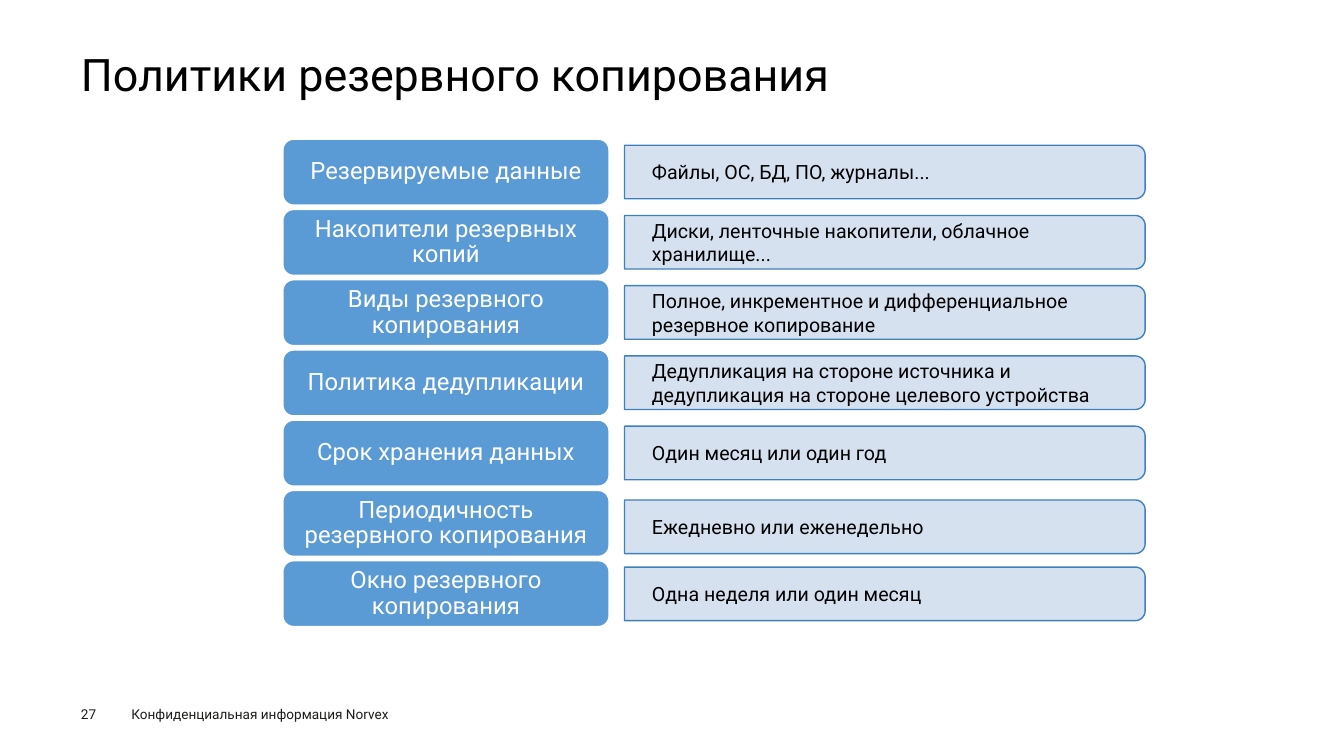
import math
from dataclasses import dataclass

from lxml import etree
from pptx import Presentation
from pptx import util as u
from pptx.dml.color import RGBColor
from pptx.enum import shapes, text
from pptx.oxml import ns


@dataclass(frozen=True)
class Theme:
    font: str = "Roboto"
    ink: str = "000000"
    footer_ink: str = "1D1D1B"
    white: str = "FFFFFF"
    label_fill: str = "5B9BD5"
    detail_fill: str = "D2DEEF"
    detail_line: str = "2E75B6"
    detail_opacity: int = 90
    title_size: float = 32
    label_size: float = 17
    detail_size: float = 14
    footer_size: float = 9.7


@dataclass(frozen=True)
class Box:
    """A region of the slide, in centimetres."""
    left: float
    top: float
    width: float
    height: float

    def lengths(self):
        return [u.Cm(n) for n in (self.left, self.top, self.width, self.height)]


THEME = Theme()

# Label, detail, and how far the detail bar sits below the top of its label
POLICIES = [
    ("Резервируемые данные", "Файлы, ОС, БД, ПО, журналы...", 0.16),
    ("Накопители резервных копий",
     "Диски, ленточные накопители, облачное хранилище...", 0.16),
    ("Виды резервного копирования",
     "Полное, инкрементное и дифференциальное резервное копирование", 0.16),
    ("Политика дедупликации",
     "Дедупликация на стороне источника и дедупликация на стороне "
     "целевого устройства", 0.16),
    ("Срок хранения данных", "Один месяц или один год", 0.16),
    ("Периодичность резервного копирования", "Ежедневно или еженедельно", 0.25),
    ("Окно резервного копирования", "Одна неделя или один месяц", 0.17),
]


def write(shape, words, size, color, insets=(0, 0, 0, 0),
          align=text.PP_ALIGN.LEFT, anchor=text.MSO_ANCHOR.MIDDLE, spacing=1.0):
    """Fill a shape with one formatted paragraph."""
    frame = shape.text_frame
    frame.text = words
    frame.word_wrap = True
    frame.vertical_anchor = anchor
    (frame.margin_left, frame.margin_top,
     frame.margin_right, frame.margin_bottom) = [u.Cm(n) for n in insets]
    para = frame.paragraphs[0]
    para.alignment = align
    para.line_spacing = spacing
    for span in para.runs:
        span.font.name = THEME.font
        span.font.size = u.Pt(size)
        span.font.color.rgb = RGBColor.from_string(color)


def paint(shape, fill, line, width, opacity=100):
    """Set fill and outline, both with the same opacity."""
    shape.shadow.inherit = False
    shape.fill.solid()
    shape.fill.fore_color.rgb = RGBColor.from_string(fill)
    shape.line.color.rgb = RGBColor.from_string(line)
    shape.line.width = u.Pt(width)
    if opacity < 100:
        for color in shape.element.spPr.iter(ns.qn("a:srgbClr")):
            etree.SubElement(color, ns.qn("a:alpha"), val=str(opacity * 1000))


def add_title(page, box):
    shape = page.shapes.add_textbox(*box.lengths())
    write(shape, "Политики резервного копирования", THEME.title_size,
          THEME.ink, spacing=0.9)


def add_label(page, box, words):
    shape = page.shapes.add_shape(
        shapes.MSO_SHAPE.ROUNDED_RECTANGLE, *box.lengths())
    paint(shape, THEME.label_fill, THEME.white, 1.5)
    write(shape, words, THEME.label_size, THEME.white,
          insets=(0.17, 0.1, 0.17, 0.1), align=text.PP_ALIGN.CENTER, spacing=0.9)


def add_detail(page, box, words):
    """A bar with square left corners and rounded right corners."""
    radius, steps = 0.25, 10
    right, bottom = box.left + box.width, box.top + box.height
    turns = [math.pi / 2 * step / steps for step in range(steps + 1)]
    upper = [(right - radius + radius * math.sin(turn),
              box.top + radius - radius * math.cos(turn)) for turn in turns]
    lower = [(x, box.top + bottom - y) for x, y in reversed(upper)]
    outline = upper + lower + [(box.left, bottom)]
    builder = page.shapes.build_freeform(u.Cm(box.left), u.Cm(box.top))
    builder.add_line_segments([(u.Cm(x), u.Cm(y)) for x, y in outline], close=True)
    shape = builder.convert_to_shape()
    paint(shape, THEME.detail_fill, THEME.detail_line, 1, THEME.detail_opacity)
    write(shape, words, THEME.detail_size, THEME.ink, insets=(0.69, 0, 0.76, 0))


def add_policies(page, box):
    label_width, label_height, gap, detail_height = 8.24, 1.68, 0.38, 1.35
    pitch = (box.height - label_height) / (len(POLICIES) - 1)
    detail_left = box.left + label_width + gap
    detail_width = box.width - label_width - gap
    for row, (label, detail, drop) in enumerate(POLICIES):
        top = box.top + row * pitch
        add_detail(page, Box(detail_left, top + drop, detail_width, detail_height),
                   detail)
        add_label(page, Box(box.left, top, label_width, label_height), label)


def add_footer(page, box):
    number_width = 1.02
    notice_left = box.left + number_width + 0.25
    notice_width = box.width - number_width - 0.25
    parts = [("27", Box(box.left, box.top, number_width, box.height)),
             ("Конфиденциальная информация Norvex",
              Box(notice_left, box.top, notice_width, box.height))]
    for words, part in parts:
        shape = page.shapes.add_textbox(*part.lengths())
        write(shape, words, THEME.footer_size, THEME.footer_ink,
              anchor=text.MSO_ANCHOR.TOP)


def main():
    deck = Presentation()
    deck.slide_width, deck.slide_height = u.Cm(33.87), u.Cm(19.05)
    page = deck.slides.add_slide(deck.slide_layouts[6])

    add_title(page, Box(2.04, 1.24, 29.8, 1.38))
    add_policies(page, Box(7.12, 3.5, 21.74, 12.3))
    add_footer(page, Box(2.04, 17.78, 9, 0.41))

    deck.save("out.pptx")


if __name__ == "__main__":
    main()
